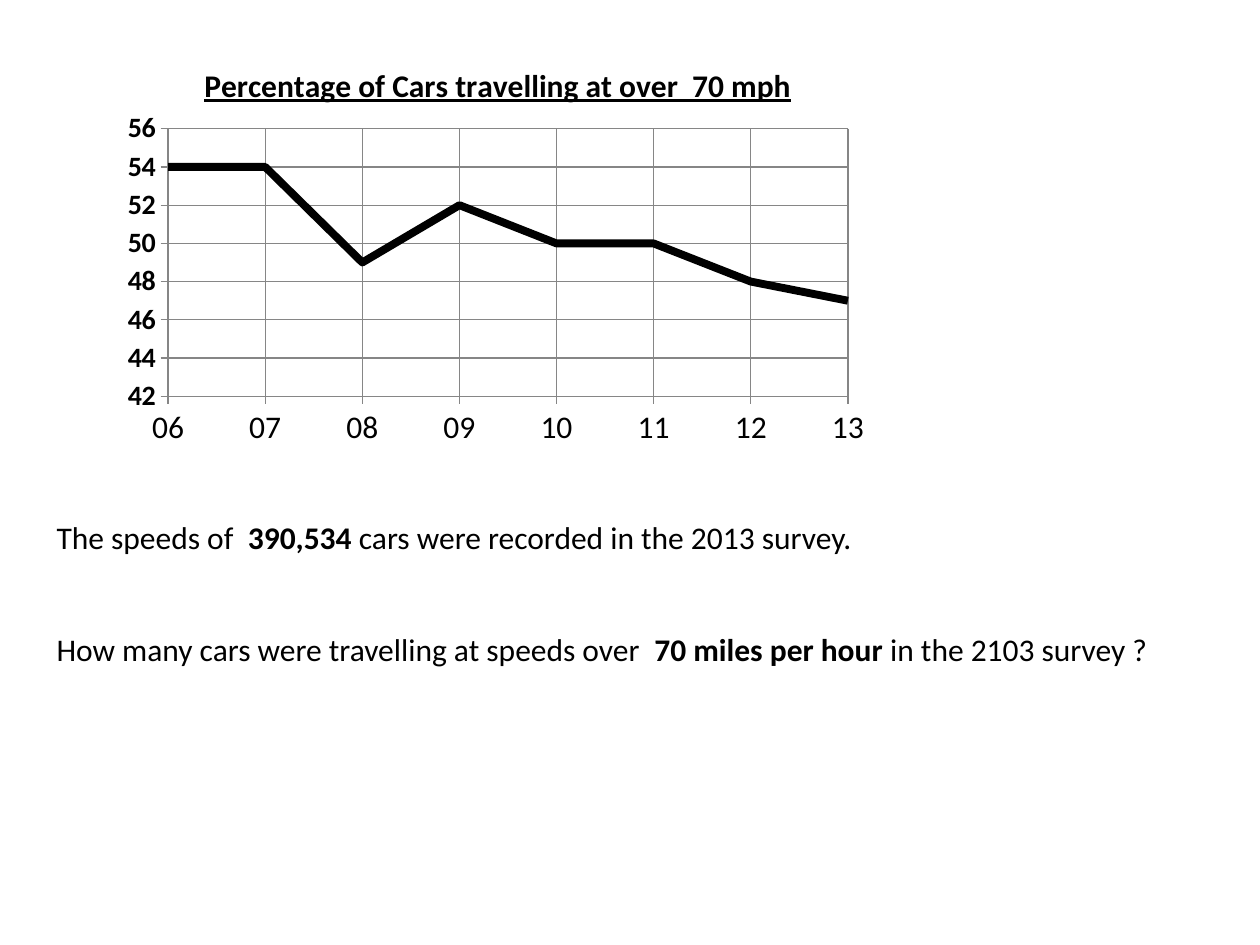
from dataclasses import dataclass

import pptx
import pptx.chart.data
import pptx.dml.color
import pptx.enum.chart
import pptx.enum.text
import pptx.oxml
import pptx.oxml.ns
import pptx.util

Pt = pptx.util.Pt


@dataclass(frozen=True)
class Theme:
    font: str = "Calibri"
    ink: str = "000000"
    grid: str = "868686"
    text_size: int = 18
    value_size: int = 16
    series_width: float = 4.5
    grid_width: float = 0.75


THEME = Theme()
YEARS = ["06", "07", "08", "09", "10", "11", "12", "13"]
PERCENTAGES = [54, 54, 49, 52, 50, 50, 48, 47]


def style_font(font, size=THEME.text_size, bold=False):
    font.name = THEME.font
    font.size = Pt(size)
    font.bold = bold
    font.color.rgb = pptx.dml.color.RGBColor.from_string(THEME.ink)


def style_line(line, color, width):
    line.color.rgb = pptx.dml.color.RGBColor.from_string(color)
    line.width = Pt(width)


def manual_layout(target, **fractions):
    """Place a chart part by fractions of the chart area; w and h mean the inner plot."""
    for old in target.findall(pptx.oxml.ns.qn("c:layout")):
        target.remove(old)
    settings = {"layoutTarget": "inner"} if "w" in fractions else {}
    settings.update(xMode="edge", yMode="edge", **fractions)
    children = "".join(f'<c:{name} val="{value}"/>' for name, value in settings.items())
    layout = pptx.oxml.parse_xml(
        f'<c:layout {pptx.oxml.ns.nsdecls("c")}><c:manualLayout>{children}</c:manualLayout></c:layout>'
    )
    text = target.find(pptx.oxml.ns.qn("c:tx"))
    target.insert(0 if text is None else target.index(text) + 1, layout)


def start_line_on_axis(value_axis):
    """Start the line on the value axis itself, not half a category away."""
    crossing = pptx.oxml.parse_xml(
        f'<c:crossBetween {pptx.oxml.ns.nsdecls("c")} val="midCat"/>'
    )
    value_axis._element.find(pptx.oxml.ns.qn("c:majorUnit")).addprevious(crossing)


def style_axis(axis, size, bold):
    style_font(axis.tick_labels.font, size, bold)
    axis.major_tick_mark = pptx.enum.chart.XL_TICK_MARK.OUTSIDE
    axis.has_major_gridlines = True
    for line in (axis.format.line, axis.major_gridlines.format.line):
        style_line(line, THEME.grid, THEME.grid_width)


def add_chart_title(chart, text):
    chart.has_title = True
    title = chart.chart_title
    title.include_in_layout = False
    span = title.text_frame.paragraphs[0].add_run()
    span.text = text
    style_font(span.font, bold=True)
    span.font.underline = True
    manual_layout(title._element, x=0.11, y=0.05)


def add_speed_chart(page):
    data = pptx.chart.data.CategoryChartData()
    data.categories = YEARS
    data.add_series("Series 1", PERCENTAGES)
    chart = page.shapes.add_chart(
        pptx.enum.chart.XL_CHART_TYPE.LINE_STACKED,
        Pt(65.5), Pt(21), Pt(436.5), Pt(239), data,
    ).chart
    style_font(chart.font)
    chart.has_legend = False
    add_chart_title(chart, "Percentage of Cars travelling at over  70 mph")

    style_axis(chart.category_axis, THEME.text_size, False)
    values = chart.value_axis
    style_axis(values, THEME.value_size, True)
    values.minimum_scale, values.maximum_scale, values.major_unit = 42, 56, 2
    start_line_on_axis(values)

    plot = chart.plots[0]
    plot.vary_by_categories = False
    manual_layout(plot._element.getparent(), x=0.07, y=0.22, w=0.89, h=0.64)
    series = plot.series[0]
    series.smooth = False
    series.marker.style = pptx.enum.chart.XL_MARKER_STYLE.NONE
    style_line(series.format.line, THEME.ink, THEME.series_width)


def add_question(page, paragraphs):
    """Add a text box; each paragraph is a list of (text, bold) runs."""
    box = page.shapes.add_textbox(Pt(25.2), Pt(281.5), Pt(677.5), Pt(105))
    frame = box.text_frame
    frame.word_wrap = True
    frame.auto_size = pptx.enum.text.MSO_AUTO_SIZE.SHAPE_TO_FIT_TEXT
    for index, spans in enumerate(paragraphs):
        para = frame.add_paragraph() if index else frame.paragraphs[0]
        para.line_spacing = 1.5
        para.space_before = Pt(32 if index else 0)
        for text, bold in spans:
            span = para.add_run()
            span.text = text
            style_font(span.font, bold=bold)


def main():
    deck = pptx.Presentation()
    deck.slide_width, deck.slide_height = Pt(720), Pt(540)
    page = deck.slides.add_slide(deck.slide_layouts.get_by_name("Blank"))
    add_speed_chart(page)
    add_question(page, [
        [("The speeds of  ", False), ("390,534", True),
         (" cars were recorded in the 2013 survey.", False)],
        [("How many cars were travelling at speeds over  ", False),
         ("70 miles per hour ", True), ("in the 2103 survey ?", False)],
    ])
    deck.save("out.pptx")


if __name__ == "__main__":
    main()
